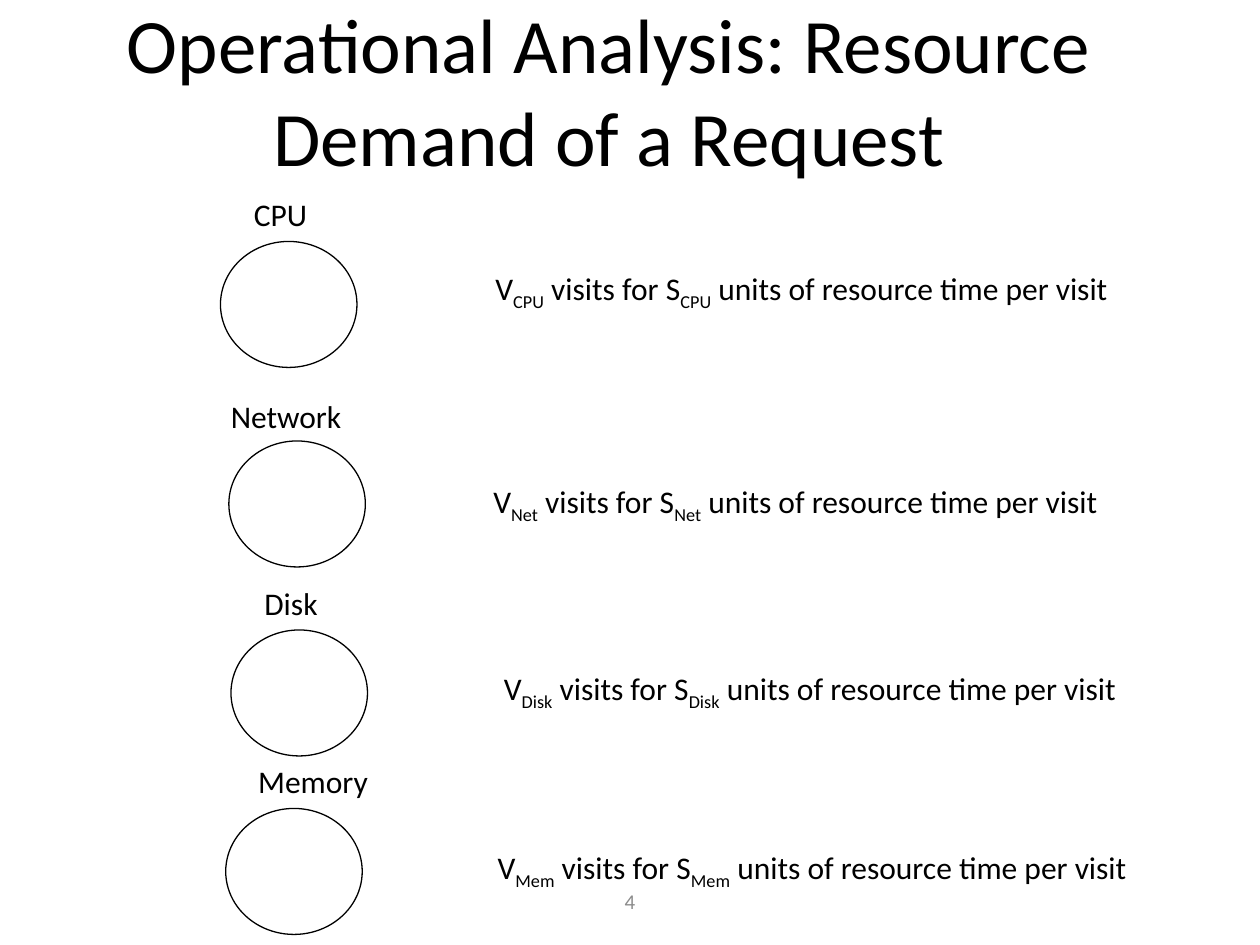
from pptx import Presentation
from pptx.dml.color import RGBColor
from pptx.enum.shapes import MSO_SHAPE as Shape
from pptx.enum.text import MSO_ANCHOR as Anchor, MSO_AUTO_SIZE as AutoSize, PP_ALIGN as Align
from pptx.util import Inches, Pt

BLACK = RGBColor(0x00, 0x00, 0x00)
WHITE = RGBColor(0xFF, 0xFF, 0xFF)
GRAY = RGBColor(0x8C, 0x8C, 0x8C)

COLUMNS, ROWS = 120, 90
TEXT_ROWS = 4.8

RESOURCES = [
    ("CPU", "CPU", (23, 18, 11), (21, 23), (46, 25, 71)),
    ("Network", "Net", (20.8, 37.2, 13.6), (21.8, 42), (45.8, 45.3, 68.3)),
    ("Disk", "Disk", (24, 55, 8.3), (22, 60), (46.8, 63.1, 69.8)),
    ("Memory", "Mem", (23.4, 72, 13.3), (21.5, 77), (46.2, 80.2, 70.9)),
]


class SlideBuilder:
    font_name = "Calibri"
    text_size = 18

    def __init__(self, presentation):
        self.column = presentation.slide_width / COLUMNS
        self.row = presentation.slide_height / ROWS
        self.slide = presentation.slides.add_slide(presentation.slide_layouts[5])

    def place(self, left, top, width, height):
        return (round(left * self.column), round(top * self.row),
                round(width * self.column), round(height * self.row))

    def style(self, run, size, color=BLACK):
        run.font.name = self.font_name
        run.font.size = Pt(size)
        run.font.color.rgb = color

    def title(self, text, *cells):
        shape = self.slide.shapes.title
        shape.left, shape.top, shape.width, shape.height = self.place(*cells)
        frame = shape.text_frame
        frame.text = text
        frame.auto_size = AutoSize.NONE
        frame.vertical_anchor = Anchor.MIDDLE
        paragraph = frame.paragraphs[0]
        paragraph.alignment = Align.CENTER
        self.style(paragraph.runs[0], 44)

    def text_frame(self, shapes, left, top, width):
        shape = shapes.add_textbox(*self.place(left, top, width, TEXT_ROWS))
        shape.text_frame.word_wrap = True
        return shape.text_frame

    def resource(self, name, label_cells, circle_cells):
        group = self.slide.shapes.add_group_shape()
        frame = self.text_frame(group.shapes, *label_cells)
        frame.text = name
        self.style(frame.paragraphs[0].runs[0], self.text_size)
        circle = group.shapes.add_shape(Shape.OVAL, *self.place(*circle_cells, 13, 12))
        circle.shadow.inherit = False
        circle.fill.solid()
        circle.fill.fore_color.rgb = WHITE
        circle.line.color.rgb = BLACK
        circle.line.width = Pt(0.75)

    def demand(self, subscript, cells):
        paragraph = self.text_frame(self.slide.shapes, *cells).paragraphs[0]
        parts = ["V", subscript, " visits for S", subscript,
                 " units of resource time per visit"]
        for part in parts:
            run = paragraph.add_run()
            run.text = part
            self.style(run, self.text_size)
            if part == subscript:
                run.font._element.set("baseline", "-25000")

    def page_number(self, text, *cells):
        frame = self.text_frame(self.slide.shapes, *cells)
        frame.text = text
        frame.vertical_anchor = Anchor.MIDDLE
        paragraph = frame.paragraphs[0]
        paragraph.alignment = Align.CENTER
        self.style(paragraph.runs[0], 12, GRAY)


def main():
    presentation = Presentation()
    presentation.slide_width = Inches(10)
    presentation.slide_height = Inches(7.5)
    builder = SlideBuilder(presentation)
    builder.title("Operational Analysis: Resource Demand of a Request", 7, 1, 102, 15)
    builder.page_number("4", 41, 83.4, 38)
    for name, subscript, label_cells, circle_cells, demand_cells in RESOURCES:
        builder.resource(name, label_cells, circle_cells)
        builder.demand(subscript, demand_cells)
    presentation.save("out.pptx")


if __name__ == "__main__":
    main()
